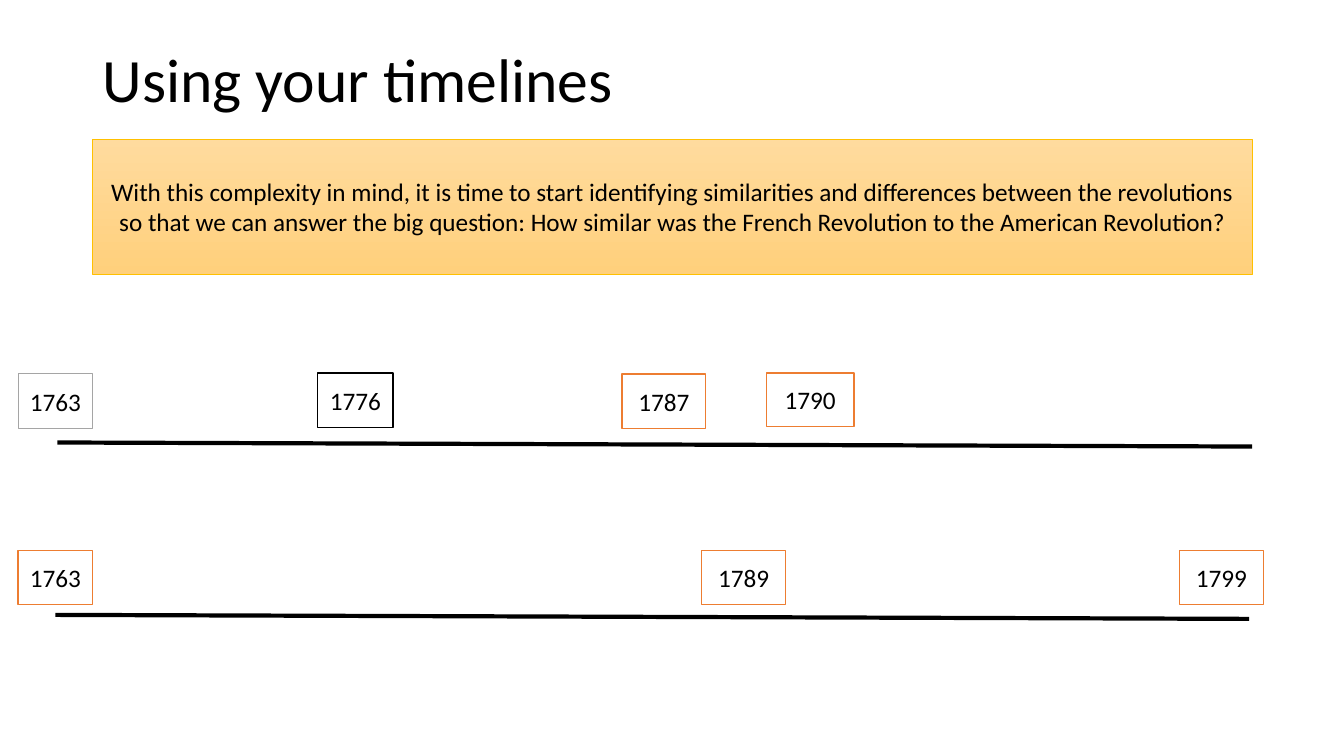
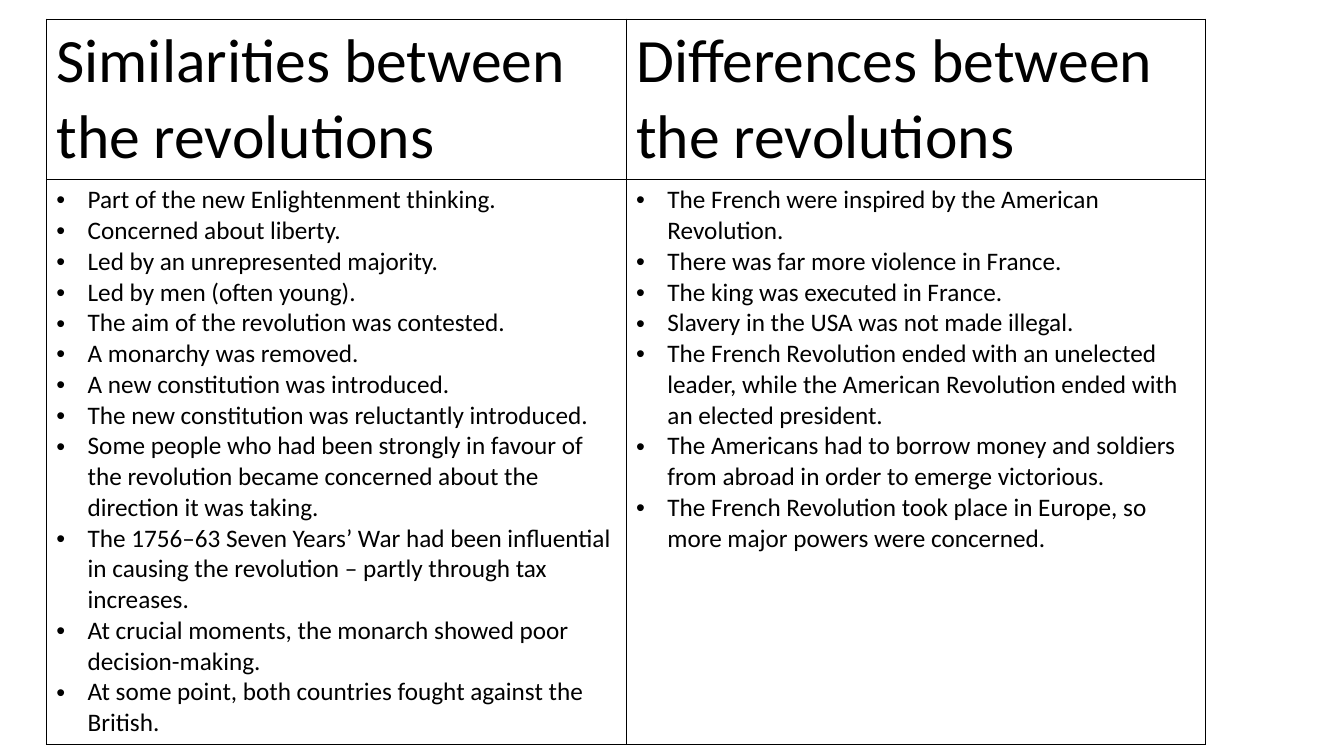
from lxml.etree import SubElement
from pptx import Presentation
from pptx.dml.color import RGBColor
from pptx.enum.shapes import MSO_CONNECTOR, MSO_SHAPE
from pptx.enum.text import MSO_ANCHOR, PP_ALIGN
from pptx.oxml.ns import qn
from pptx.util import Inches, Pt

# Shared style
FONT = "Calibri"
BLACK, WHITE, ORANGE, GREY, GOLD = "000000", "FFFFFF", "ED7D31", "A5A5A5", "FFC000"
BANNER_TOP, BANNER_BOTTOM = "FFDB9E", "FFD07C"
TITLE_SIZE, BODY_SIZE = 44, 18
TITLE_ONLY, BLANK = 5, 6

QUESTION = (
    "With this complexity in mind, it is time to start identifying similarities and "
    "differences between the revolutions so that we can answer the big question: "
    "How similar was the French Revolution to the American Revolution?"
)

# Each timeline: line start and end, then (year, left, top, width, height, outline, weight)
AMERICAN = ((0.57, 4.39), (12.42, 4.43), [
    ("1763", 0.18, 3.71, 0.74, 0.54, GREY, 0.75),
    ("1776", 3.15, 3.7, 0.75, 0.54, BLACK, 1),
    ("1787", 6.17, 3.71, 0.83, 0.54, ORANGE, 1),
    ("1790", 7.6, 3.7, 0.87, 0.53, ORANGE, 1),
])
FRENCH = ((0.55, 6.1), (12.39, 6.14), [
    ("1763", 0.18, 5.46, 0.74, 0.54, ORANGE, 1),
    ("1789", 6.96, 5.46, 0.83, 0.54, ORANGE, 1),
    ("1799", 11.7, 5.46, 0.83, 0.54, ORANGE, 1),
])

COMPARISON = {
    "Similarities between the revolutions": [
        "Part of the new Enlightenment thinking.",
        "Concerned about liberty.",
        "Led by an unrepresented majority.",
        "Led by men (often young).",
        "The aim of the revolution was contested.",
        "A monarchy was removed.",
        "A new constitution was introduced.",
        "The new constitution was reluctantly introduced.",
        "Some people who had been strongly in favour of the revolution became "
        "concerned about the direction it was taking.",
        "The 1756–63 Seven Years’ War had been influential in causing the "
        "revolution – partly through tax increases.",
        "At crucial moments, the monarch showed poor decision-making.",
        "At some point, both countries fought against the British.",
    ],
    "Differences between the revolutions": [
        "The French were inspired by the American Revolution.",
        "There was far more violence in France.",
        "The king was executed in France.",
        "Slavery in the USA was not made illegal.",
        "The French Revolution ended with an unelected leader, while the American "
        "Revolution ended with an elected president.",
        "The Americans had to borrow money and soldiers from abroad in order to "
        "emerge victorious.",
        "The French Revolution took place in Europe, so more major powers were concerned.",
    ],
}


def rgb(color):
    return RGBColor.from_string(color)


def write(paragraph, text, size=BODY_SIZE, align=PP_ALIGN.LEFT):
    paragraph.alignment = align
    run = paragraph.add_run()
    run.text = text
    run.font.name, run.font.size = FONT, Pt(size)
    run.font.color.rgb = rgb(BLACK)


def add_title(slide, text, left, top, width, height):
    title = slide.shapes.title
    title.left, title.top = Inches(left), Inches(top)
    title.width, title.height = Inches(width), Inches(height)
    title.text_frame.vertical_anchor = MSO_ANCHOR.MIDDLE
    paragraph = title.text_frame.paragraphs[0]
    paragraph.line_spacing = 0.9
    write(paragraph, text, TITLE_SIZE)


def add_box(slide, text, left, top, width, height, outline, weight):
    """Outlined white box with centred text."""
    box = slide.shapes.add_shape(MSO_SHAPE.RECTANGLE, Inches(left), Inches(top),
                                 Inches(width), Inches(height))
    box.shadow.inherit = False
    box.fill.solid()
    box.fill.fore_color.rgb = rgb(WHITE)
    box.line.color.rgb = rgb(outline)
    box.line.width = Pt(weight)
    box.text_frame.word_wrap = True
    box.text_frame.vertical_anchor = MSO_ANCHOR.MIDDLE
    write(box.text_frame.paragraphs[0], text, align=PP_ALIGN.CENTER)
    return box


def add_banner(slide, text, left, top, width, height):
    banner = add_box(slide, text, left, top, width, height, GOLD, 0.5)
    banner.fill.gradient()
    banner.fill.gradient_angle = 270
    for stop, color in zip(banner.fill.gradient_stops, (BANNER_TOP, BANNER_BOTTOM)):
        stop.color.rgb = rgb(color)


def add_timeline(slide, start, end, dates):
    axis = slide.shapes.add_connector(MSO_CONNECTOR.STRAIGHT,
                                      *(Inches(value) for value in start + end))
    axis.line.color.rgb = rgb(BLACK)
    axis.line.width = Pt(3)
    SubElement(axis._element.spPr, qn("a:effectLst"))
    for date in dates:
        add_box(slide, *date)


def add_borders(cell):
    properties = cell._tc.get_or_add_tcPr()
    for position, side in enumerate(("a:lnL", "a:lnR", "a:lnT", "a:lnB")):
        border = properties.makeelement(qn(side), {"w": str(Pt(1))})
        SubElement(SubElement(border, qn("a:solidFill")), qn("a:srgbClr"), val=BLACK)
        properties.insert(position, border)


def add_bullet(paragraph):
    properties = paragraph._p.get_or_add_pPr()
    indent = Inches(0.31)
    properties.set("marL", str(indent))
    properties.set("indent", str(-indent))
    SubElement(properties, qn("a:buFont"), typeface="Arial")
    SubElement(properties, qn("a:buChar"), char="•")


def add_comparison(slide, columns, left, top, width, row_heights):
    """Two-row table: headings above bulleted lists."""
    table = slide.shapes.add_table(2, len(columns), Inches(left), Inches(top),
                                   Inches(width), Inches(sum(row_heights))).table
    table.first_row = table.horz_banding = False
    for row, height in zip(table.rows, row_heights):
        row.height = Inches(height)
    for column, (heading, points) in enumerate(columns.items()):
        heading_cell, points_cell = table.cell(0, column), table.cell(1, column)
        for cell in (heading_cell, points_cell):
            cell.fill.solid()
            cell.fill.fore_color.rgb = rgb(WHITE)
            add_borders(cell)
        write(heading_cell.text_frame.paragraphs[0], heading, TITLE_SIZE)
        frame = points_cell.text_frame
        for index, point in enumerate(points):
            paragraph = frame.add_paragraph() if index else frame.paragraphs[0]
            write(paragraph, point)
            add_bullet(paragraph)


def build_timelines(deck):
    slide = deck.slides.add_slide(deck.slide_layouts[TITLE_ONLY])
    add_title(slide, "Using your timelines", 0.92, 0.4, 11.5, 0.84)
    add_banner(slide, QUESTION, 0.92, 1.38, 11.5, 1.34)
    for timeline in (AMERICAN, FRENCH):
        add_timeline(slide, *timeline)


def build_comparison(deck):
    slide = deck.slides.add_slide(deck.slide_layouts[BLANK])
    add_comparison(slide, COMPARISON, 0.46, 0.19, 11.5, (1.45, 5.6))


def main():
    deck = Presentation()
    deck.slide_width, deck.slide_height = Inches(13.33), Inches(7.5)
    build_timelines(deck)
    build_comparison(deck)
    deck.save("out.pptx")


if __name__ == "__main__":
    main()
